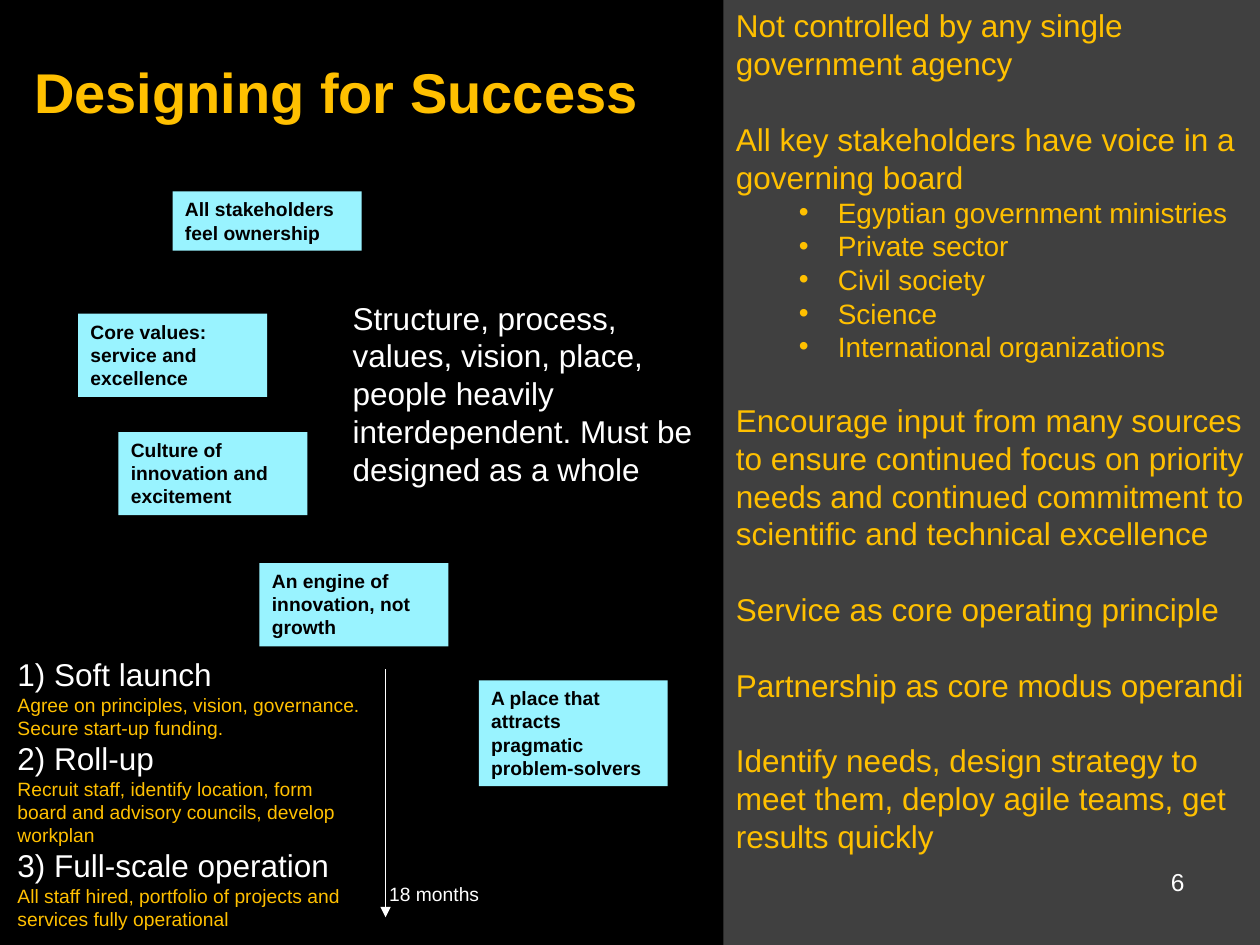
from dataclasses import dataclass

from lxml import etree
from pptx import Presentation
from pptx.dml.color import RGBColor
from pptx.enum.shapes import MSO_CONNECTOR, MSO_SHAPE
from pptx.enum.text import MSO_ANCHOR, MSO_AUTO_SIZE, PP_ALIGN
from pptx.oxml.ns import qn
from pptx.util import Inches, Pt

LEFT, RIGHT = PP_ALIGN.LEFT, PP_ALIGN.RIGHT
TOP, MIDDLE = MSO_ANCHOR.TOP, MSO_ANCHOR.MIDDLE
NO_FIT = MSO_AUTO_SIZE.NONE
RECT, STRAIGHT = MSO_SHAPE.RECTANGLE, MSO_CONNECTOR.STRAIGHT

BLACK = RGBColor(0x00, 0x00, 0x00)
WHITE = RGBColor(0xFF, 0xFF, 0xFF)
GREY = RGBColor(0x40, 0x40, 0x40)
GOLD = RGBColor(0xFF, 0xC0, 0x00)
CYAN = RGBColor(0x99, 0xF3, 0xFF)
FONT = "Arial"
BODY_SIZE, SUB_SIZE, SMALL_SIZE = 18, 16, 11
PARAGRAPH_GAP = 21.6


@dataclass
class Card:
    text: str
    left: float
    top: float
    height: float


@dataclass
class Phase:
    title: str
    detail: str


@dataclass
class Principle:
    text: str
    members: tuple[str, ...] = ()


CARDS = [
    Card("All stakeholders feel ownership", 1.37, 1.52, 0.47),
    Card("An engine of innovation, not growth", 2.06, 4.47, 0.66),
    Card("Culture of innovation and excitement", 0.94, 3.43, 0.66),
    Card("Core values: service and excellence", 0.62, 2.49, 0.66),
    Card("A place that attracts pragmatic problem-solvers", 3.8, 5.4, 0.84),
]
PHASES = [
    Phase("1) Soft launch",
          "Agree on principles, vision, governance. Secure start-up funding."),
    Phase("2) Roll-up",
          "Recruit staff, identify location, form board and advisory councils, "
          "develop workplan"),
    Phase("3) Full-scale operation",
          "All staff hired, portfolio of projects and services fully operational"),
]
PRINCIPLES = [
    Principle("Not controlled by any single government agency"),
    Principle("All key stakeholders have voice in a governing board",
              ("Egyptian government ministries", "Private sector",
               "Civil society", "Science", "International organizations")),
    Principle("Encourage input from many sources to ensure continued focus on "
              "priority needs and continued commitment to scientific and "
              "technical excellence"),
    Principle("Service as core operating principle"),
    Principle("Partnership as core modus operandi"),
    Principle("Identify needs, design strategy to meet them, deploy agile "
              "teams, get results quickly"),
]


def place(sp, left: float, top: float, width: float, height: float) -> None:
    sp.left, sp.top = Inches(left), Inches(top)
    sp.width, sp.height = Inches(width), Inches(height)


def setup_frame(sp, anchor=TOP):
    tf = sp.text_frame
    tf.word_wrap = True
    tf.auto_size = NO_FIT
    tf.vertical_anchor = anchor
    return tf


def add_text(tf, text: str, size: float = BODY_SIZE, color: RGBColor = WHITE,
             bold: bool = False, align=LEFT, before: float = 0,
             bullet: bool = False):
    """Fill the first empty paragraph, or append a new one."""
    first = tf.paragraphs[0]
    p = tf.add_paragraph() if first.runs else first
    p.alignment = align
    p.space_before = Pt(before)
    pPr = p._p.get_or_add_pPr()
    if bullet:
        p.level = 1
        pPr.set("marL", str(Inches(0.81)))
        pPr.set("indent", str(Inches(-0.31)))
        etree.SubElement(pPr, qn("a:buFont"), typeface=FONT)
        etree.SubElement(pPr, qn("a:buChar"), char="•")
    else:
        pPr.set("marL", "0")
        pPr.set("indent", "0")
        etree.SubElement(pPr, qn("a:buNone"))
    r = p.add_run()
    r.text = text
    r.font.name, r.font.size, r.font.bold = FONT, Pt(size), bold
    r.font.color.rgb = color
    return p


def add_box(s, left: float, top: float, width: float, height: float):
    sp = s.shapes.add_textbox(Inches(left), Inches(top),
                              Inches(width), Inches(height))
    return setup_frame(sp)


def add_card(s, card: Card) -> None:
    sp = s.shapes.add_shape(RECT, Inches(card.left), Inches(card.top),
                            Inches(1.5), Inches(card.height))
    sp.shadow.inherit = False
    sp.fill.solid()
    sp.fill.fore_color.rgb = CYAN
    sp.line.fill.background()
    add_text(setup_frame(sp), card.text, size=SMALL_SIZE, color=BLACK, bold=True)


def add_arrow(s, x: float, top: float, bottom: float) -> None:
    line = s.shapes.add_connector(STRAIGHT, Inches(x), Inches(top),
                                  Inches(x), Inches(bottom))
    line.line.color.rgb = WHITE
    line.line.width = Pt(0.75)
    etree.SubElement(line.line._get_or_add_ln(), qn("a:tailEnd"), type="triangle")
    etree.SubElement(line._element.spPr, qn("a:effectLst"))


def main() -> None:
    prs = Presentation()
    prs.slide_width, prs.slide_height = Inches(10), Inches(7.5)
    s = prs.slides.add_slide(prs.slide_layouts[1])
    s.background.fill.solid()
    s.background.fill.fore_color.rgb = BLACK

    # Title
    title = s.shapes.title
    place(title, 0.17, -0.08, 5.75, 1.61)
    add_text(setup_frame(title, MIDDLE), "Designing for Success",
             size=32, color=GOLD, bold=True)

    # Sidebar with the governing principles
    sidebar = s.placeholders[1]
    place(sidebar, 5.74, 0, 4.26, 7.51)
    sidebar.fill.solid()
    sidebar.fill.fore_color.rgb = GREY
    tf = setup_frame(sidebar)
    for i, principle in enumerate(PRINCIPLES):
        add_text(tf, principle.text, color=GOLD, before=PARAGRAPH_GAP if i else 0)
        for member in principle.members:
            add_text(tf, member, size=SUB_SIZE, color=GOLD, bullet=True)

    # Slide number
    add_text(add_box(s, 7.17, 6.83, 2.33, 0.52), "6", size=14, align=RIGHT)

    # Cards around the central statement
    for card in CARDS:
        add_card(s, card)
    add_text(add_box(s, 2.7, 2.32, 3.13, 1.62),
             "Structure, process, values, vision, place, people heavily "
             "interdependent. Must be designed as a whole")

    # Launch phases and their timeline
    tf = add_box(s, 0.04, 5.15, 2.98, 2.12)
    for phase in PHASES:
        add_text(tf, phase.title)
        add_text(tf, phase.detail, size=SMALL_SIZE, color=GOLD)
    add_arrow(s, 3.06, 5.31, 7.28)
    add_text(add_box(s, 2.99, 6.95, 2.02, 0.29), "18 months", size=SMALL_SIZE)

    prs.save("out.pptx")


if __name__ == "__main__":
    main()
